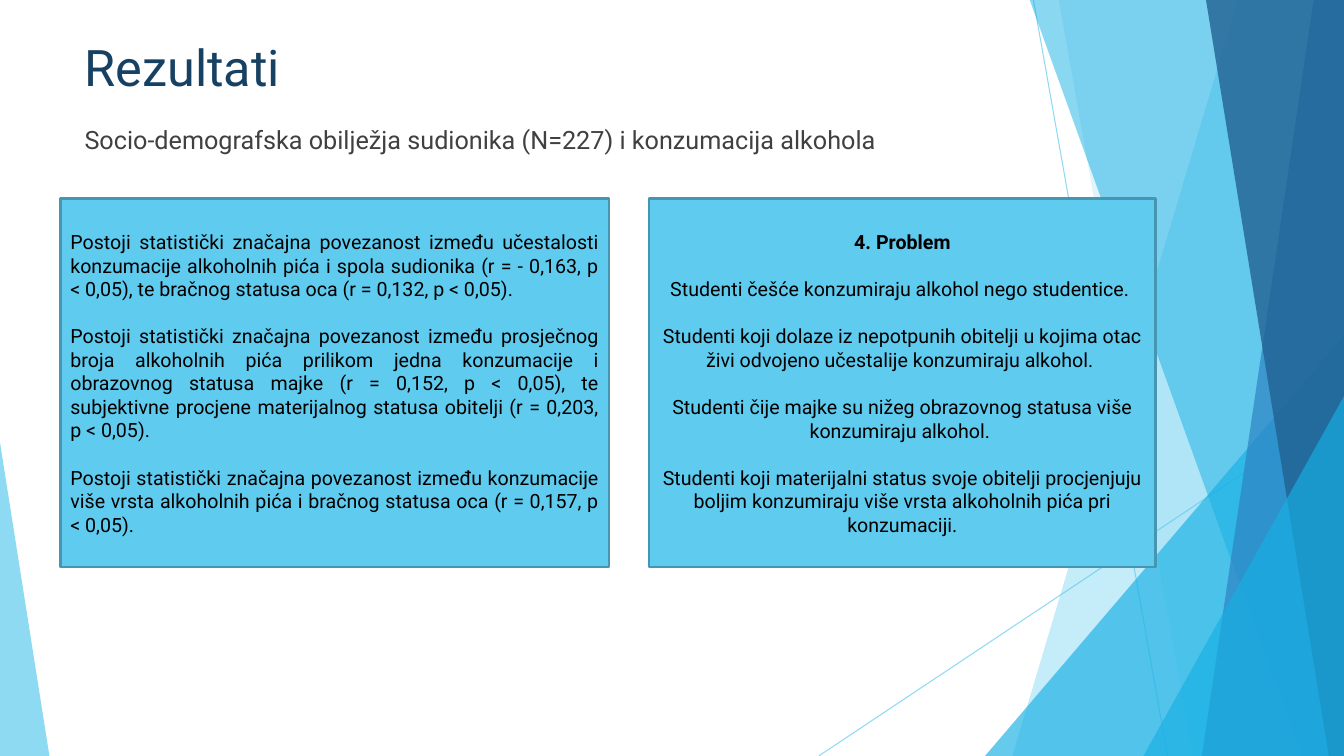
from lxml import etree
from pptx import Presentation
from pptx import util as u
from pptx.dml.color import RGBColor
from pptx.enum import shapes, text
from pptx.oxml import ns

SKY = RGBColor(0x5F, 0xCB, 0xEF)
CYAN = RGBColor(0x17, 0xB0, 0xE4)
BLUE = RGBColor(0x2E, 0x83, 0xC3)
NAVY = RGBColor(0x22, 0x62, 0x92)
TITLE = RGBColor(0x17, 0x41, 0x62)
GREY = RGBColor(0x40, 0x40, 0x40)
BORDER = RGBColor(0x46, 0x96, 0xB1)
BLACK = RGBColor(0, 0, 0)

WIDTH, HEIGHT, TOP = 13.33, 7.5, -0.01
FACETS = [
    (12.28, 10.04, SKY, 36),
    (10.5, 11.83, SKY, 20),
    (10.21, 12.91, CYAN, 50),
    (13.03, 11.92, BLUE, 70),
    (11.96, 13.18, NAVY, 80),
]
FINDINGS = [
    "Postoji statistički značajna povezanost između učestalosti konzumacije alkoholnih pića i spola sudionika (r = - 0,163, p < 0,05), te bračnog statusa oca (r = 0,132, p < 0,05).",
    "Postoji statistički značajna povezanost između prosječnog broja alkoholnih pića prilikom jedna konzumacije i obrazovnog statusa majke (r = 0,152, p < 0,05), te subjektivne procjene materijalnog statusa obitelji (r = 0,203, p < 0,05).",
    "Postoji statistički značajna povezanost između konzumacije više vrsta alkoholnih pića i bračnog statusa oca (r = 0,157, p < 0,05).",
]
PROBLEM = [
    "4. Problem",
    "Studenti češće konzumiraju alkohol nego studentice. ",
    "Studenti koji dolaze iz nepotpunih obitelji u kojima otac živi odvojeno učestalije konzumiraju alkohol. ",
    "Studenti čije majke su nižeg obrazovnog statusa više konzumiraju alkohol. ",
    "Studenti koji materijalni status svoje obitelji procjenjuju boljim konzumiraju više vrsta alkoholnih pića pri konzumaciji.",
]


class Deck:
    """Hold the presentation, its current slide and the shared style."""

    font = "Roboto"

    def __init__(self):
        self.prs = Presentation()
        self.prs.slide_width = u.Inches(WIDTH)
        self.prs.slide_height = u.Inches(HEIGHT)
        self.s = self.prs.slides.add_slide(self.prs.slide_layouts[5])

    def fade(self, fill, opacity):
        color = fill.find(".//" + ns.qn("a:srgbClr"))
        etree.SubElement(color, ns.qn("a:alpha")).set("val", str(opacity * 1000))

    def tint(self, sp, color, opacity):
        sp.shadow.inherit = False
        sp.fill.solid()
        sp.fill.fore_color.rgb = color
        sp.line.fill.background()
        self.fade(sp._element.spPr.find(ns.qn("a:solidFill")), opacity)

    def line(self, x1, y1, x2, y2):
        sp = self.s.shapes.add_connector(
            shapes.MSO_CONNECTOR.STRAIGHT, *map(u.Inches, (x1, y1, x2, y2)))
        sp.line.color.rgb = SKY
        sp.line.width = u.Pt(0.75)
        self.fade(sp._element.spPr.find(ns.qn("a:ln")), 70)
        etree.SubElement(sp._element.spPr, ns.qn("a:effectLst"))

    def facet(self, top_x, bottom_x, color, opacity):
        points = [(WIDTH, TOP), (WIDTH, HEIGHT), (bottom_x, HEIGHT)]
        builder = self.s.shapes.build_freeform(u.Inches(top_x), u.Inches(TOP))
        builder.add_line_segments([(u.Inches(x), u.Inches(y)) for x, y in points])
        self.tint(builder.convert_to_shape(), color, opacity)

    def triangle(self, x, y, w, apex, color, opacity):
        sp = self.s.shapes.add_shape(
            shapes.MSO_SHAPE.ISOSCELES_TRIANGLE,
            *map(u.Inches, (x, y, w, HEIGHT - y)))
        sp.adjustments[0] = apex
        self.tint(sp, color, opacity)

    def set_text(self, sp, lines, size, color, align, anchor, gap=0):
        tf = sp.text_frame
        tf.word_wrap = True
        tf.auto_size = text.MSO_AUTO_SIZE.NONE
        tf.vertical_anchor = anchor
        for i, line in enumerate(lines):
            p = tf.add_paragraph() if i else tf.paragraphs[0]
            p.text = line
            p.alignment = align
            p.space_before = u.Pt(gap if i else 0)
            p.font.name = self.font
            p.font.size = u.Pt(size)
            p.font.color.rgb = color
        return tf

    def title(self, line, x, y, w, h):
        sp = self.s.shapes.title
        sp.left, sp.top, sp.width, sp.height = map(u.Inches, (x, y, w, h))
        self.set_text(sp, [line], 36, TITLE, text.PP_ALIGN.LEFT, text.MSO_ANCHOR.MIDDLE)

    def subtitle(self, line, x, y, w, h):
        sp = self.s.shapes.add_textbox(*map(u.Inches, (x, y, w, h)))
        self.set_text(sp, [line], 18, GREY, text.PP_ALIGN.LEFT, text.MSO_ANCHOR.TOP)

    def panel(self, lines, x, w, align):
        sp = self.s.shapes.add_shape(
            shapes.MSO_SHAPE.RECTANGLE, *map(u.Inches, (x, 1.97, w, 3.66)))
        sp.shadow.inherit = False
        sp.fill.solid()
        sp.fill.fore_color.rgb = SKY
        sp.line.color.rgb = BORDER
        sp.line.width = u.Pt(1.5)
        return self.set_text(sp, lines, 14, BLACK, align, text.MSO_ANCHOR.MIDDLE, gap=16.9)


def main():
    deck = Deck()
    deck.line(10.25, 0, 11.58, HEIGHT)
    deck.line(WIDTH, 4.03, 8.12, HEIGHT)
    for facet in FACETS[:2]:
        deck.facet(*facet)
    deck.triangle(9.77, 3.33, 3.56, 1, CYAN, 66)
    for facet in FACETS[2:]:
        deck.facet(*facet)
    deck.triangle(11.34, 3.93, 1.99, 1, CYAN, 66)
    deck.triangle(0, 4.39, 0.49, 0, SKY, 70)

    deck.title("Rezultati", 0.74, 0.26, 9.4, 0.79)
    deck.subtitle("Socio-demografska obilježja sudionika (N=227) i konzumacija alkohola",
                  0.74, 1.18, 9.4, 5.81)
    deck.panel(FINDINGS, 0.6, 5.44, text.PP_ALIGN.JUSTIFY)
    tf = deck.panel(PROBLEM, 6.44, 5.02, text.PP_ALIGN.CENTER)
    tf.paragraphs[0].font.bold = True
    deck.prs.save("out.pptx")


if __name__ == "__main__":
    main()
